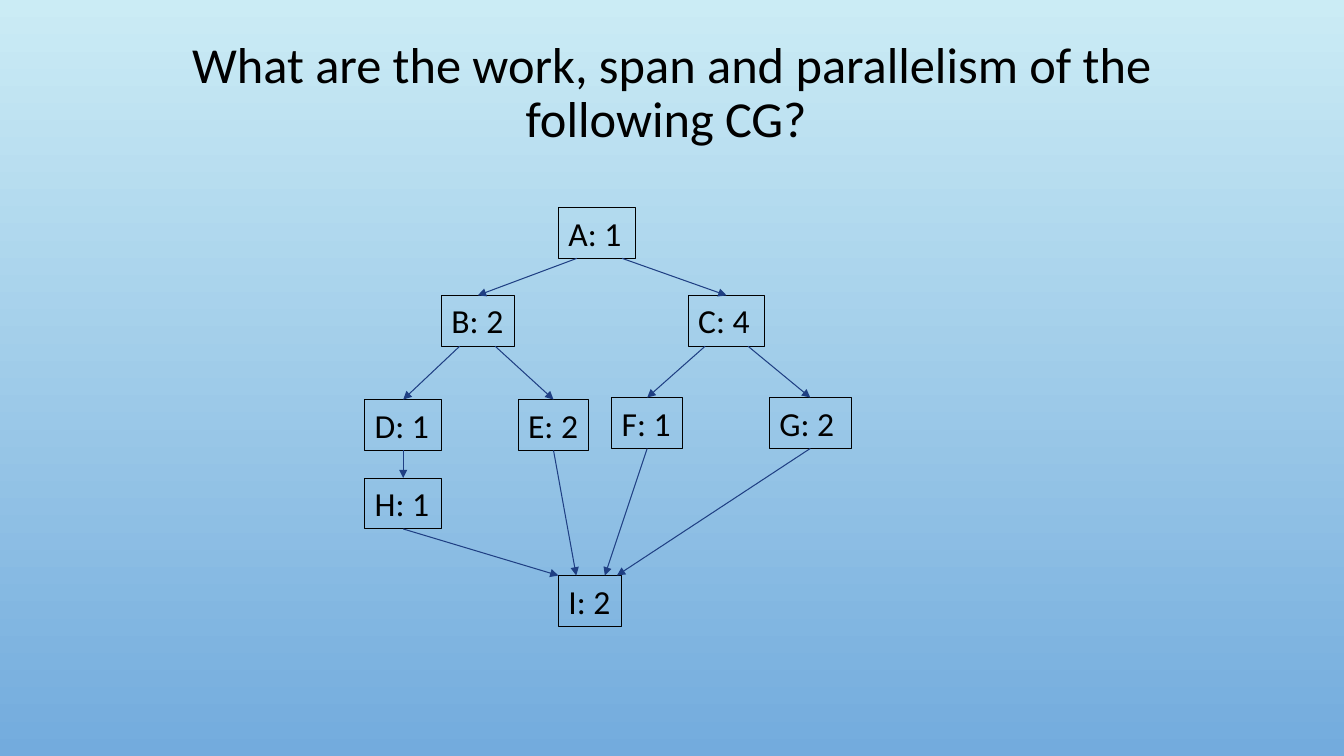
from dataclasses import dataclass

import pptx
import pptx.dml.color
import pptx.enum.shapes
import pptx.enum.text
import pptx.oxml
import pptx.oxml.ns
import pptx.presentation
import pptx.shapes.autoshape
import pptx.slide
import pptx.util

Pt = pptx.util.Pt
RGB = pptx.dml.color.RGBColor


@dataclass(frozen=True)
class Theme:
    font: str = "Calibri"
    title_size: float = 36
    task_size: float = 24
    line_width: float = 0.75
    ink: RGB = RGB.from_string("000000")
    arrow: RGB = RGB.from_string("1F3F83")
    sky: tuple[RGB, RGB] = (RGB.from_string("CBECF5"), RGB.from_string("73ABDD"))


@dataclass(frozen=True)
class Task:
    name: str
    cost: int
    left: float
    top: float
    width: float


@dataclass(frozen=True)
class Dependency:
    """Arrow between tasks; leave and enter are fractions along the facing sides."""
    before: str
    after: str
    leave: float = 0.5
    enter: float = 0.5


THEME = Theme()
TASK_HEIGHT = 36.35
TOP, BOTTOM = 0, 2  # connection sites of a rectangle

TASKS = [
    Task("A", 1, 398.9, 148.2, 54.8),
    Task("B", 2, 315.4, 211, 51.8),
    Task("C", 4, 491.6, 211, 54.8),
    Task("D", 1, 260.6, 285.4, 54.8),
    Task("E", 2, 370.1, 285.4, 50.6),
    Task("F", 1, 437, 284, 50.6),
    Task("G", 2, 549.6, 284, 58.4),
    Task("H", 1, 260.6, 341.5, 54.8),
    Task("I", 2, 398.9, 411.1, 45.4),
]

DEPENDENCIES = [
    Dependency("A", "B", leave=0.24),
    Dependency("A", "C", leave=0.83),
    Dependency("B", "D", leave=0.25),
    Dependency("B", "E", leave=0.74),
    Dependency("C", "F", leave=0.22),
    Dependency("C", "G", leave=0.78),
    Dependency("D", "H"),
    Dependency("H", "I", enter=0),
    Dependency("E", "I", enter=0.28),
    Dependency("F", "I", enter=0.73),
    Dependency("G", "I", enter=0.92),
]


def paint_background(slide: pptx.slide.Slide) -> None:
    fill = slide.background.fill
    fill.gradient()
    fill.gradient_angle = 270
    for stop, colour in zip(fill.gradient_stops, THEME.sky):
        stop.color.rgb = colour


def write(shape: pptx.shapes.autoshape.Shape, text: str, size: float,
          align: pptx.enum.text.PP_ALIGN) -> None:
    shape.text_frame.text = text
    paragraph = shape.text_frame.paragraphs[0]
    paragraph.alignment = align
    paragraph.font.name = THEME.font
    paragraph.font.size = Pt(size)
    paragraph.font.color.rgb = THEME.ink


def add_title(slide: pptx.slide.Slide, text: str) -> None:
    title = slide.shapes.add_textbox(Pt(72), Pt(23), Pt(816), Pt(88.6))
    write(title, text, THEME.title_size, pptx.enum.text.PP_ALIGN.CENTER)
    title.text_frame.word_wrap = True
    title.text_frame.vertical_anchor = pptx.enum.text.MSO_ANCHOR.MIDDLE
    title.text_frame.paragraphs[0].line_spacing = 0.9


def add_task(slide: pptx.slide.Slide, task: Task) -> pptx.shapes.autoshape.Shape:
    box = slide.shapes.add_shape(
        pptx.enum.shapes.MSO_SHAPE.RECTANGLE,
        Pt(task.left), Pt(task.top), Pt(task.width), Pt(TASK_HEIGHT))
    box.shadow.inherit = False
    box.fill.background()
    box.line.color.rgb = THEME.ink
    box.line.width = Pt(THEME.line_width)
    write(box, f"{task.name}: {task.cost}", THEME.task_size, pptx.enum.text.PP_ALIGN.LEFT)
    box.text_frame.word_wrap = False
    box.text_frame.auto_size = pptx.enum.text.MSO_AUTO_SIZE.SHAPE_TO_FIT_TEXT
    box.text_frame.vertical_anchor = pptx.enum.text.MSO_ANCHOR.TOP
    return box


def add_dependency(slide: pptx.slide.Slide, link: Dependency,
                   boxes: dict[str, pptx.shapes.autoshape.Shape]) -> None:
    before, after = boxes[link.before], boxes[link.after]
    arrow = slide.shapes.add_connector(
        pptx.enum.shapes.MSO_CONNECTOR.STRAIGHT,
        before.left + round(before.width * link.leave), before.top + before.height,
        after.left + round(after.width * link.enter), after.top)
    if link.leave == 0.5:
        arrow.begin_connect(before, BOTTOM)
    if link.enter == 0.5:
        arrow.end_connect(after, TOP)
    arrow.line.color.rgb = THEME.arrow
    arrow.line.width = Pt(THEME.line_width)

    # Arrowhead, and no shadow
    line_xml = arrow.line._get_or_add_ln()
    head = pptx.oxml.parse_xml(
        f'<a:tailEnd {pptx.oxml.ns.nsdecls("a")} type="triangle"/>')
    line_xml.append(head)
    line_xml.addnext(pptx.oxml.parse_xml(f'<a:effectLst {pptx.oxml.ns.nsdecls("a")}/>'))


def main() -> None:
    deck: pptx.presentation.Presentation = pptx.Presentation()
    deck.slide_width, deck.slide_height = Pt(960), Pt(540)
    slide = deck.slides.add_slide(deck.slide_layouts[6])

    paint_background(slide)
    add_title(slide, "What are the work, span and parallelism of the following CG? ")

    # Computation graph
    boxes = {task.name: add_task(slide, task) for task in TASKS}
    for link in DEPENDENCIES:
        add_dependency(slide, link, boxes)

    deck.save("out.pptx")


if __name__ == "__main__":
    main()
